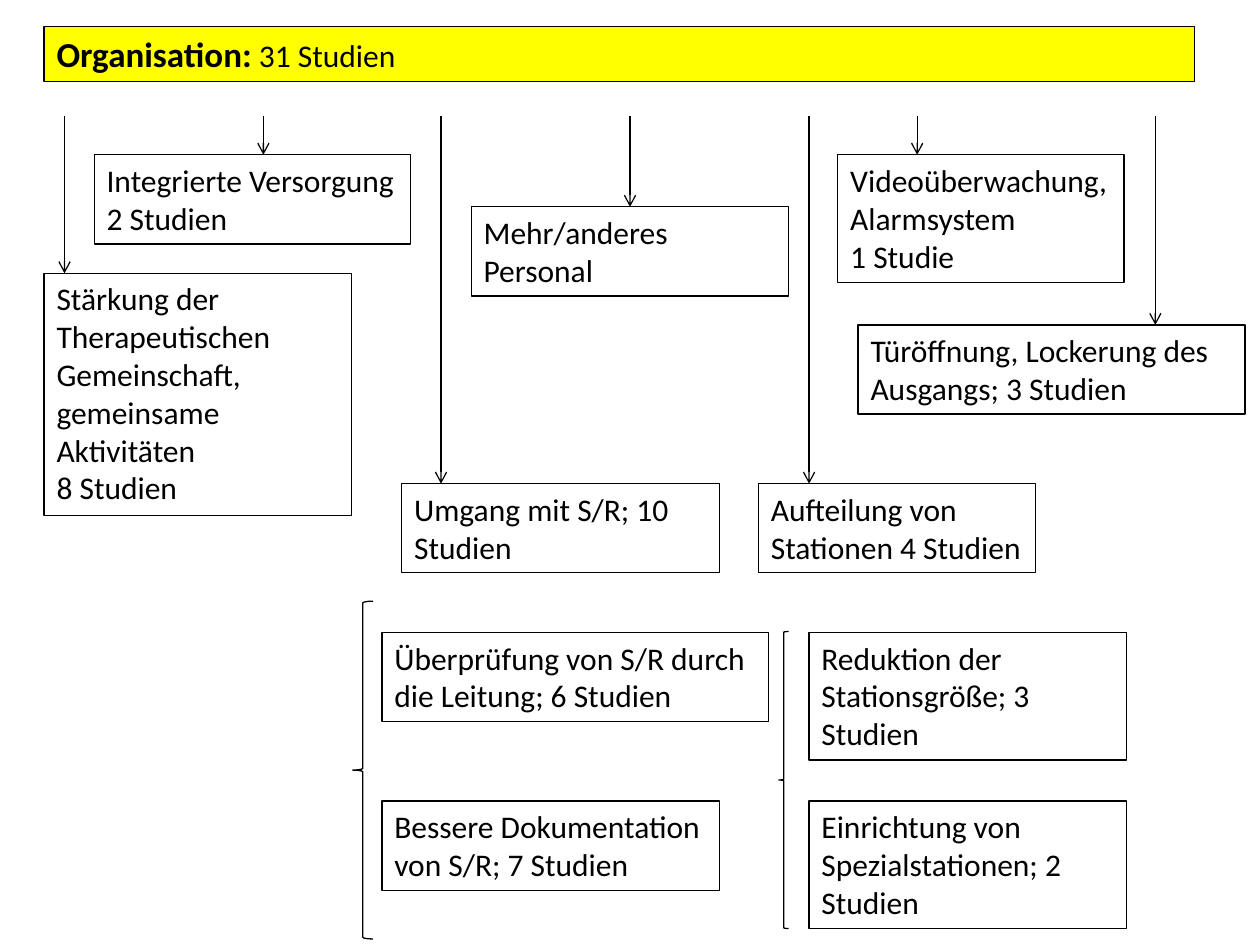
"""Builds the overview slide of organisational studies as a flow chart."""
import pptx
import pptx.util
import pptx.dml.color
import pptx.enum.shapes
import pptx.enum.text
import pptx.oxml

Cm = pptx.util.Cm
Pt = pptx.util.Pt
SHAPES = pptx.enum.shapes.MSO_SHAPE
COLORS = {"ink": "000000", "title": "FFFF00"}
BODY = {"name": "Calibri", "size": Pt(18), "bold": False}
HEADING = {"name": "Calibri", "size": Pt(20), "bold": True}
FRAME = {
    "auto_size": pptx.enum.text.MSO_AUTO_SIZE.SHAPE_TO_FIT_TEXT,
    "vertical_anchor": pptx.enum.text.MSO_ANCHOR.TOP,
}
TITLE_AT = (0.89, 0.53, 23.19, 1.12)
TITLE = [[("Organisation:", HEADING), (" 31 Studien", BODY)]]
ARROW_TOP = 2.34
LINE_HEIGHT, PADDING = 0.77, 0.26

TOPICS = [
    {"at": (0.89, 5.51), "width": 6.2, "lines": 6, "arrow": 1.3,
     "text": ["Stärkung der", "Therapeutischen Gemeinschaft,",
              "gemeinsame Aktivitäten", "8 Studien"]},
    {"at": (1.9, 3.12), "width": 6.38, "lines": 2, "arrow": 5.31, "wrap": False,
     "text": ["Integrierte Versorgung", "2 Studien"]},
    {"at": (8.1, 9.75), "width": 6.4, "lines": 2, "arrow": 8.89,
     "text": ["Umgang mit S/R; 10 Studien"]},
    {"at": (9.5, 4.17), "width": 6.4, "lines": 2, "arrow": "middle",
     "text": ["Mehr/anderes Personal"]},
    {"at": (15.29, 9.75), "width": 5.59, "lines": 2, "arrow": 16.31,
     "text": ["Aufteilung von Stationen 4 Studien"]},
    {"at": (16.89, 3.12), "width": 5.77, "lines": 3, "arrow": 18.49, "wrap": False,
     "text": ["Videoüberwachung,", "Alarmsystem", "1 Studie"]},
    {"at": (17.3, 6.55), "width": 7.8, "lines": 2, "arrow": 23.29,
     "text": ["Türöffnung, Lockerung des Ausgangs; 3 Studien"]},
    {"at": (7.7, 12.75), "width": 7.8, "lines": 2,
     "text": ["Überprüfung von S/R durch die Leitung; 6 Studien"]},
    {"at": (7.7, 16.15), "width": 6.81, "lines": 2,
     "text": ["Bessere Dokumentation von S/R; 7 Studien"]},
    {"at": (16.31, 12.75), "width": 6.4, "lines": 3,
     "text": ["Reduktion der Stationsgröße; 3 Studien"]},
    {"at": (16.31, 16.15), "width": 6.4, "lines": 3,
     "text": ["Einrichtung von Spezialstationen; 2 Studien"]},
]
BRACES = [(7.11, 12.12, 0.41, 6.81), (15.7, 12.73, 0.2, 5.99)]


def rgb(name):
    return pptx.dml.color.RGBColor.from_string(COLORS[name])


def set_all(target, values):
    for name, value in values.items():
        setattr(target, name, value)


def draw_line(line):
    line.color.rgb = rgb("ink")
    line.width = Pt(0.75)


def add_outline(page, kind, place, fill=None):
    shape = page.shapes.add_shape(kind, *map(Cm, place))
    shape.shadow.inherit = False
    draw_line(shape.line)
    if fill:
        shape.fill.solid()
        shape.fill.fore_color.rgb = rgb(fill)
    else:
        shape.fill.background()
    return shape


def add_box(page, place, paragraphs, fill=None, wrap=True):
    box = add_outline(page, SHAPES.RECTANGLE, place, fill)
    frame = box.text_frame
    set_all(frame, FRAME)
    frame.word_wrap = wrap
    for index, spans in enumerate(paragraphs):
        para = frame.add_paragraph() if index else frame.paragraphs[0]
        para.alignment = pptx.enum.text.PP_ALIGN.LEFT
        for text, style in spans:
            span = para.add_run()
            span.text = text
            set_all(span.font, style)
            span.font.color.rgb = rgb("ink")
    return box


def add_arrow(page, x, box):
    centred = x == "middle"
    left = box.left + box.width // 2 if centred else Cm(x)
    arrow = page.shapes.add_connector(
        pptx.enum.shapes.MSO_CONNECTOR.STRAIGHT, left, Cm(ARROW_TOP), left, box.top)
    if centred:
        arrow.end_connect(box, 0)
    draw_line(arrow.line)
    namespace = pptx.oxml.ns.nsdecls("a")
    arrow.line._get_or_add_ln().append(
        pptx.oxml.parse_xml(f'<a:tailEnd {namespace} type="arrow"/>'))
    arrow._element.spPr.append(pptx.oxml.parse_xml(f"<a:effectLst {namespace}/>"))


def main():
    deck = pptx.Presentation()
    deck.slide_width, deck.slide_height = Cm(25.4), Cm(19.05)
    page = deck.slides.add_slide(deck.slide_layouts[6])
    add_box(page, TITLE_AT, TITLE, "title")
    for topic in TOPICS:
        height = PADDING + LINE_HEIGHT * topic["lines"]
        place = (*topic["at"], topic["width"], height)
        paragraphs = [[(text, BODY)] for text in topic["text"]]
        box = add_box(page, place, paragraphs, wrap=topic.get("wrap", True))
        if "arrow" in topic:
            add_arrow(page, topic["arrow"], box)
    for place in BRACES:
        add_outline(page, SHAPES.LEFT_BRACE, place)
    deck.save("out.pptx")


if __name__ == "__main__":
    main()
